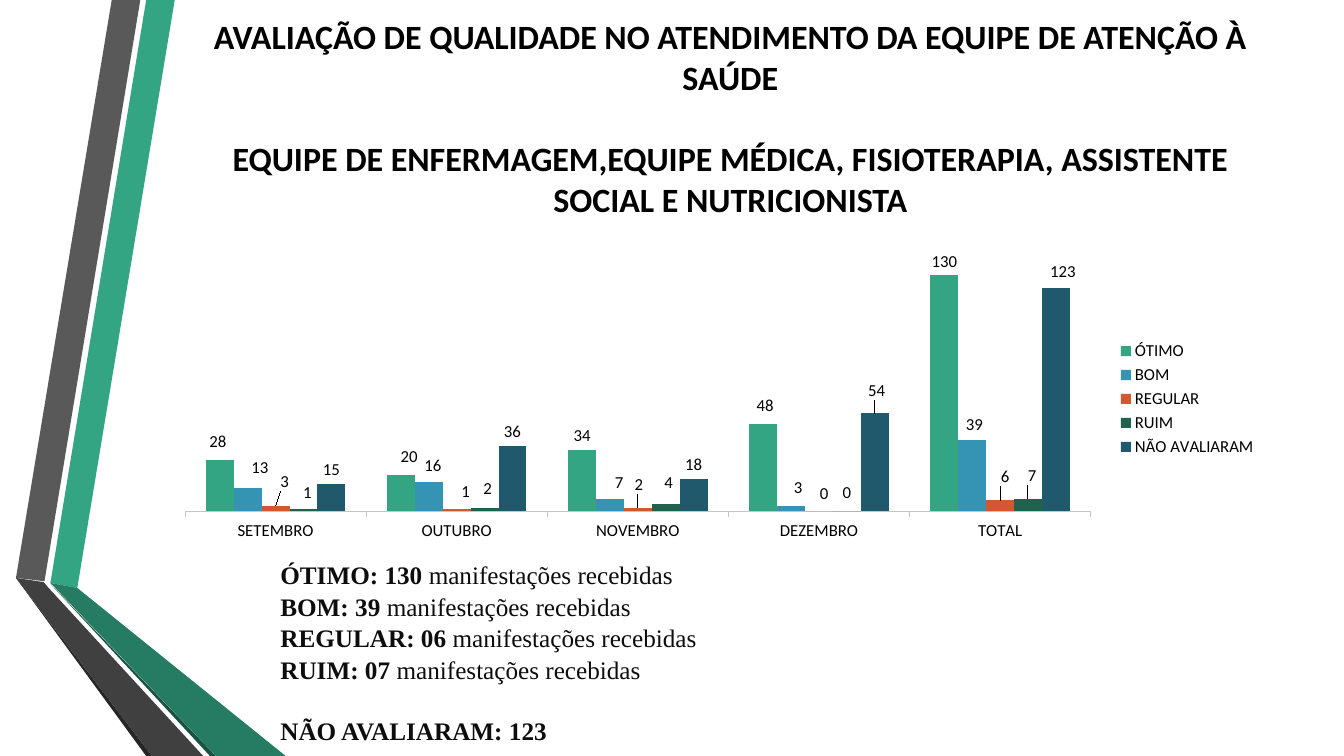
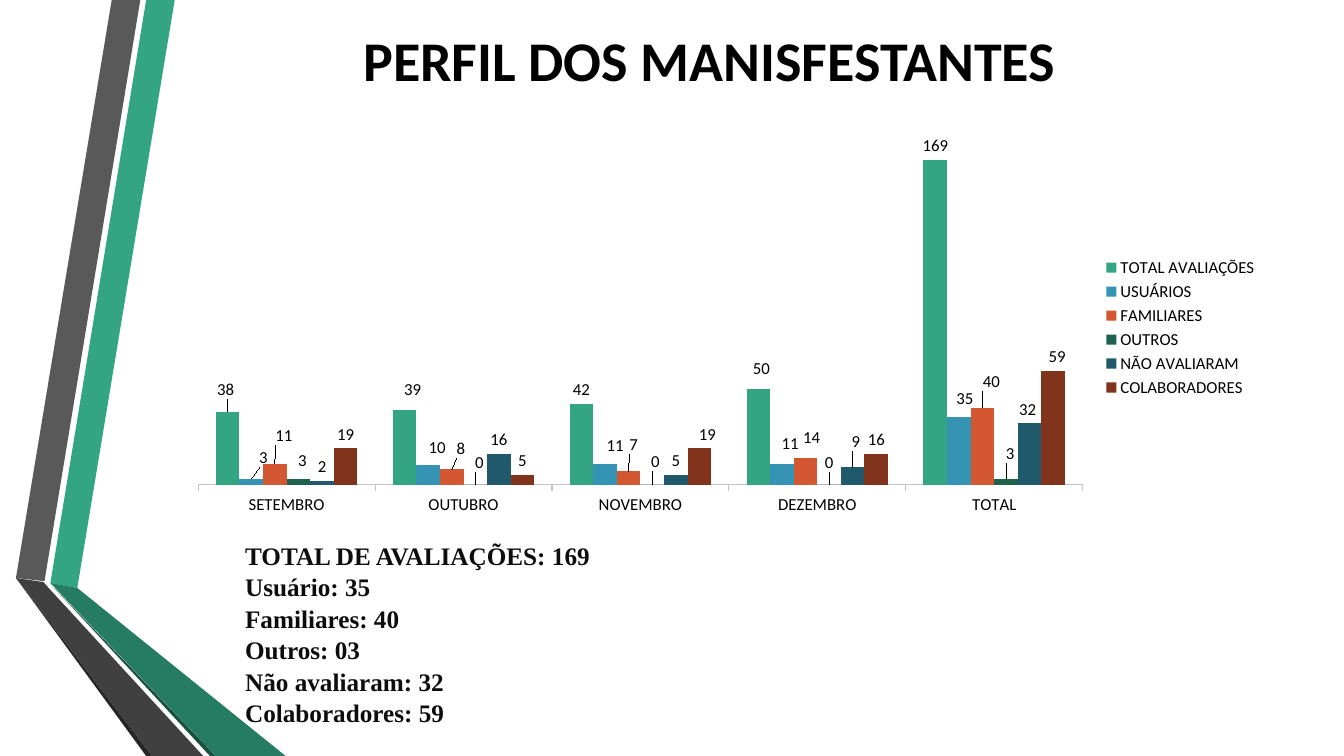
import dataclasses

import lxml.etree
import pptx
import pptx.chart.data
import pptx.dml.color
import pptx.enum.chart
import pptx.enum.text
import pptx.oxml.ns
import pptx.util


@dataclasses.dataclass(frozen=True)
class Theme:
    """Colours, fonts and type sizes in points."""
    ink: str = "000000"
    body_ink: str = "0D0D0D"
    axis: str = "C5C5C5"
    series: tuple = ("33A583", "3594B4", "D35731", "1F634F", "20596C", "81331B")
    heading_font: str = "Calibri"
    body_font: str = "Times New Roman"
    long_title: float = 24.3
    short_title: float = 40
    body: float = 18
    chart: float = 12
    title_gap: float = 29
    body_gap: float = 21.6
    body_leading: float = 1.04


# The grid has 160 columns and 90 rows of square cells
COLUMNS, ROWS = 160, 90
CELL = pptx.util.Inches(7.5) // ROWS

# Ribbon outlines as (column, row), from back to front
RIBBONS = (
    ("33A583", ((6, 69.4), (9.2, 70), (20.8, 0), (17.4, 0))),
    ("595959", ((16.7, 0), (13.3, 0), (1.9, 68.8), (5.3, 69.2))),
    ("262626", ((1.9, 68.8), (17.4, 90), (18.1, 90))),
    ("1A5242", ((6, 69.5), (25, 90), (25.7, 90))),
    ("267C62", ((6, 69.4), (25.7, 90), (34, 90), (9.2, 70))),
    ("404040", ((24.2, 90), (5.8, 70), (5.2, 69.3), (1.9, 68.8), (18.1, 90))),
)

MONTHS = ("SETEMBRO", "OUTUBRO", "NOVEMBRO", "DEZEMBRO", "TOTAL")

# Each series: name, values, label shifts in hundredths of an inch by category
QUALITY = (
    ("ÓTIMO", (28, 20, 34, 48, 130), {0: (-2, -5), 1: (8, -4), 3: (2, -4)}),
    ("BOM", (13, 16, 7, 3, 39),
     {0: (12, -6), 1: (4, -3), 2: (9, -2), 3: (7, -4), 4: (2, -2)}),
    ("REGULAR", (3, 1, 2, 0, 6),
     {0: (9, -10), 1: (9, -4), 2: (1, -9), 3: (5, -4), 4: (5, -10)}),
    ("RUIM", (1, 2, 4, 0, 7),
     {0: (4, -3), 1: (3, -5), 2: (3, -7), 3: (0, -5), 4: (4, -9)}),
    ("NÃO AVALIARAM", (15, 36, 18, 54, 123), {3: (2, -9), 4: (7, -2)}),
)
PROFILE = (
    ("TOTAL AVALIAÇÕES", (38, 39, 42, 50, 169),
     {0: (-2, -8), 1: (8, -6), 3: (3, -6)}),
    ("USUÁRIOS", (3, 10, 11, 11, 35),
     {0: (12, -7), 1: (9, -4), 2: (10, -4), 3: (8, -6), 4: (6, -5)}),
    ("FAMILIARES", (11, 8, 7, 14, 40),
     {0: (9, -14), 1: (9, -7), 2: (5, -13), 3: (6, -6), 4: (9, -12)}),
    ("OUTROS", (3, 0, 0, 0, 3),
     {0: (4, -4), 1: (4, -8), 2: (3, -9), 3: (0, -8), 4: (4, -11)}),
    ("NÃO AVALIARAM", (2, 16, 5, 9, 32), {3: (3, -12), 4: (-2, 0)}),
    ("COLABORADORES", (19, 5, 19, 16, 59), {2: (8, 0), 4: (4, -1)}),
)


def color(value):
    return pptx.dml.color.RGBColor.from_string(value)


def layout_element(**settings):
    """Build a manual chart layout from its settings, in schema order."""
    layout = lxml.etree.Element(pptx.oxml.ns.qn("c:layout"))
    manual = lxml.etree.SubElement(layout, pptx.oxml.ns.qn("c:manualLayout"))
    for name, value in settings.items():
        child = lxml.etree.SubElement(manual, pptx.oxml.ns.qn("c:" + name))
        child.set("val", str(value))
    return layout


class Deck:
    """Holds the style, the presentation and the current slide."""

    def __init__(self, theme):
        self.theme = theme
        self.presentation = pptx.Presentation()
        self.presentation.slide_width = COLUMNS * CELL
        self.presentation.slide_height = ROWS * CELL
        self.layout = self.presentation.slide_layouts[5]
        self.slide = None

    def add_slide(self):
        self.slide = self.presentation.slides.add_slide(self.layout)

    def box(self, *cells):
        return [round(cell * CELL) for cell in cells]

    def style(self, font, name, size, ink, bold=False):
        font.name = name
        font.size = pptx.util.Pt(size)
        font.color.rgb = color(ink)
        font.bold = bold

    def ribbons(self):
        """Draw the ribbons and hand them to the shared layout."""
        for index, (fill, outline) in enumerate(RIBBONS):
            points = [(x * 10, y * 10) for x, y in outline]
            builder = self.slide.shapes.build_freeform(*points[0], scale=CELL / 10)
            builder.add_line_segments(points[1:], close=True)
            shape = builder.convert_to_shape()
            shape.name = f"Ribbon {index + 1}"
            shape.shadow.inherit = False
            shape.fill.solid()
            shape.fill.fore_color.rgb = color(fill)
            shape.line.fill.background()
            shape.element.xpath("./p:nvSpPr/p:cNvPr")[0].set("id", str(100 + index))
            self.layout.shapes.element.insert(2 + index, shape.element)

    def title(self, cells, size, *lines):
        title = self.slide.shapes.title
        title.left, title.top, title.width, title.height = self.box(*cells)
        frame = title.text_frame
        frame.word_wrap = True
        frame.auto_size = pptx.enum.text.MSO_AUTO_SIZE.NONE
        frame.vertical_anchor = pptx.enum.text.MSO_ANCHOR.MIDDLE
        for index, line in enumerate(lines):
            paragraph = frame.add_paragraph() if index else frame.paragraphs[0]
            paragraph.alignment = pptx.enum.text.PP_ALIGN.CENTER
            paragraph.space_before = pptx.util.Pt(self.theme.title_gap if index else 0)
            run = paragraph.add_run()
            run.text = line
            self.style(run.font, self.theme.heading_font, size, self.theme.ink, True)

    def summary(self, cells, lines, gap_before=None):
        """Write lines of a bold part and a plain part."""
        frame = self.slide.shapes.add_textbox(*self.box(*cells)).text_frame
        frame.word_wrap = True
        for index, (strong, plain) in enumerate(lines):
            paragraph = frame.add_paragraph() if index else frame.paragraphs[0]
            paragraph.line_spacing = self.theme.body_leading
            if index == gap_before:
                paragraph.space_before = pptx.util.Pt(self.theme.body_gap)
            for text, bold in ((strong, True), (plain, False)):
                if text:
                    run = paragraph.add_run()
                    run.text = text
                    self.style(run.font, self.theme.body_font, self.theme.body,
                               self.theme.body_ink, bold)

    def columns(self, cells, rows, maximum, plot):
        """Add a column chart; plot is x, y, width, height as chart shares."""
        data = pptx.chart.data.CategoryChartData()
        data.categories = MONTHS
        for name, values, _ in rows:
            data.add_series(name, values)
        frame = self.slide.shapes.add_chart(
            pptx.enum.chart.XL_CHART_TYPE.COLUMN_CLUSTERED, *self.box(*cells), data)
        chart = frame.chart
        chart.has_title = False
        self.chart_font(chart.font)

        # Legend
        chart.has_legend = True
        chart.legend.position = pptx.enum.chart.XL_LEGEND_POSITION.RIGHT
        chart.legend.include_in_layout = False
        self.chart_font(chart.legend.font)

        # Axes
        chart.value_axis.visible = False
        chart.value_axis.has_major_gridlines = False
        chart.value_axis.minimum_scale = 0
        chart.value_axis.maximum_scale = maximum
        axis = chart.category_axis
        axis.major_tick_mark = pptx.enum.chart.XL_TICK_MARK.OUTSIDE
        axis.format.line.color.rgb = color(self.theme.axis)
        axis.format.line.width = pptx.util.Pt(0.75)
        self.chart_font(axis.tick_labels.font)

        # Plot area
        area = chart.element.xpath(".//c:plotArea")[0]
        for old_layout in area.xpath("./c:layout"):
            area.remove(old_layout)
        x, y, width, height = plot
        area.insert(0, layout_element(layoutTarget="inner", xMode="edge", yMode="edge",
                                      x=x, y=y, w=width, h=height))

        # Series and their labels
        chart.plots[0].gap_width = 150
        chart.plots[0].overlap = 0
        chart.plots[0].vary_by_categories = False
        for series, fill, (_, _, shifts) in zip(chart.plots[0].series,
                                                self.theme.series, rows):
            series.format.fill.solid()
            series.format.fill.fore_color.rgb = color(fill)
            series.invert_if_negative = False
            series.data_labels.show_value = True
            self.label(series.data_labels)
            for point, (right, down) in shifts.items():
                self.label(series.points[point].data_label)
                index = series.data_labels._element.xpath(
                    f"./c:dLbl/c:idx[@val='{point}']")[0]
                index.addnext(layout_element(
                    x=round(right / 100 / frame.width.inches, 4),
                    y=round(down / 100 / frame.height.inches, 4)))

    def label(self, label):
        label.position = pptx.enum.chart.XL_LABEL_POSITION.OUTSIDE_END
        self.chart_font(label.font)

    def chart_font(self, font):
        self.style(font, self.theme.heading_font, self.theme.chart, self.theme.ink)


def main():
    theme = Theme()
    deck = Deck(theme)

    # Quality of care
    deck.add_slide()
    deck.ribbons()
    deck.title((21.5, 1.9, 130.9, 24.1), theme.long_title,
               "AVALIAÇÃO DE QUALIDADE NO ATENDIMENTO DA EQUIPE DE ATENÇÃO À SAÚDE",
               "EQUIPE DE ENFERMAGEM,EQUIPE MÉDICA, FISIOTERAPIA, "
               "ASSISTENTE SOCIAL E NUTRICIONISTA")
    received = "manifestações recebidas"
    deck.summary((32.2, 65.9, 120.2, 23), (
        ("ÓTIMO: 130 ", received),
        ("BOM: 39 ", received),
        ("REGULAR: 06 ", received),
        ("RUIM: 07 ", received),
        ("NÃO AVALIARAM: 123", ""),
    ), gap_before=4)
    deck.columns((19.4, 29.9, 131.5, 35.2), QUALITY, 140, (0.02, 0.02, 0.82, 0.86))

    # Profile of respondents
    deck.add_slide()
    deck.title((18.7, 1.1, 131.5, 11.8), theme.short_title, "PERFIL DOS MANISFESTANTES")
    deck.summary((28, 63.6, 123, 25.2), [(line, "") for line in (
        "TOTAL DE AVALIAÇÕES: 169", "Usuário: 35", "Familiares: 40",
        "Outros: 03", "Não avaliaram: 32", "Colaboradores: 59")])
    deck.columns((21, 15.6, 130, 46.8), PROFILE, 180, (0.02, 0.02, 0.81, 0.88))

    deck.presentation.save("out.pptx")


if __name__ == "__main__":
    main()
